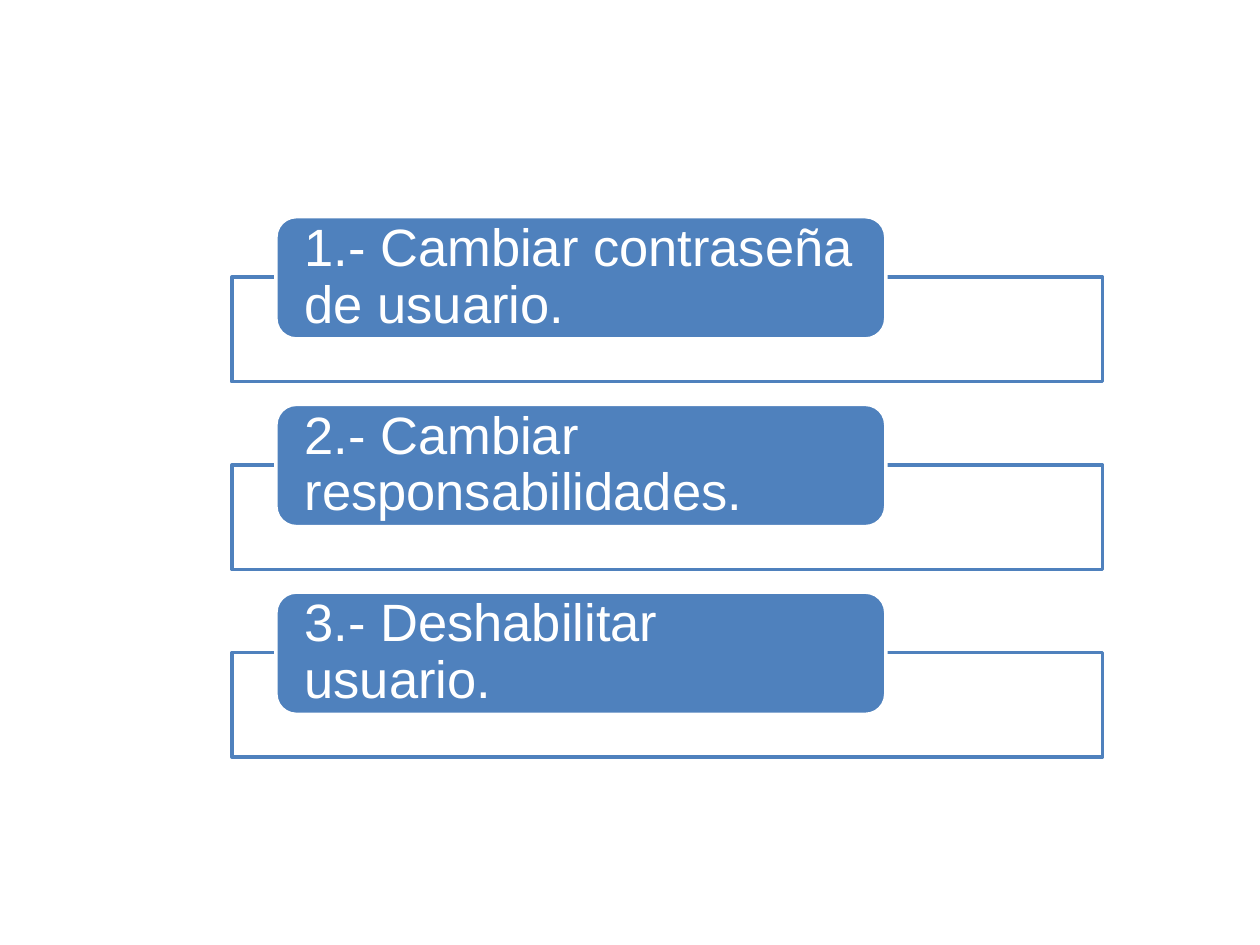
from dataclasses import dataclass

from lxml import etree
from pptx import Presentation
from pptx.dml.color import RGBColor
from pptx.enum.shapes import MSO_SHAPE
from pptx.enum.text import MSO_ANCHOR, PP_ALIGN
from pptx.oxml.ns import qn
from pptx.util import Inches, Pt

RECT = MSO_SHAPE.RECTANGLE
ROUND = MSO_SHAPE.ROUNDED_RECTANGLE
MIDDLE = MSO_ANCHOR.MIDDLE
LEFT = PP_ALIGN.LEFT


@dataclass
class Theme:
    blue: RGBColor = RGBColor(0x4F, 0x81, 0xBD)
    white: RGBColor = RGBColor(0xFF, 0xFF, 0xFF)
    font: str = "Arial"
    size: int = 30
    line: int = 2


def assign(target, values):
    for name, value in values.items():
        setattr(target, name, value)


class Deck:
    def __init__(self, theme, slide):
        self.theme = theme
        self.slide = slide

    def box(self, kind, area, fill, line):
        shape = self.slide.shapes.add_shape(kind, *map(Inches, area))
        shape.shadow.inherit = False
        shape.fill.solid()
        shape.fill.fore_color.rgb = fill
        shape.line.color.rgb = line
        shape.line.width = Pt(self.theme.line)
        return shape

    def frame(self, area):
        """Outlined box with a nearly opaque white fill."""
        shape = self.box(RECT, area, self.theme.white, self.theme.blue)
        color = shape.fill._xPr.find(qn("a:solidFill"))[0]
        etree.SubElement(color, qn("a:alpha")).set("val", "90000")

    def label(self, area, text):
        """Rounded blue box that carries a step."""
        theme = self.theme
        shape = self.box(ROUND, area, theme.blue, theme.white)
        frame = shape.text_frame
        assign(frame, {
            "word_wrap": True, "vertical_anchor": MIDDLE,
            "margin_left": Inches(0.18), "margin_right": Inches(0.18),
            "margin_top": 0, "margin_bottom": 0,
        })
        para = frame.paragraphs[0]
        assign(para, {"alignment": LEFT, "line_spacing": 0.9})
        run = para.add_run()
        run.text = text
        assign(run.font, {"name": theme.font, "size": Pt(theme.size)})
        run.font.color.rgb = theme.white


STEPS = [
    "1.- Cambiar contraseña de usuario.",
    "2.- Cambiar responsabilidades.",
    "3.- Deshabilitar usuario.",
]
TOP, PITCH, DROP = 1.72, 1.49, 0.48


def main():
    show = Presentation()
    show.slide_width, show.slide_height = Inches(10), Inches(7.5)
    deck = Deck(Theme(), show.slides.add_slide(show.slide_layouts[6]))

    # Each step: a wide frame with its label over the top edge
    for row, text in enumerate(STEPS):
        top = TOP + row * PITCH
        deck.frame((1.84, top + DROP, 6.91, 0.83))
        deck.label((2.19, top, 4.84, 0.97), text)

    show.save("out.pptx")


if __name__ == "__main__":
    main()
